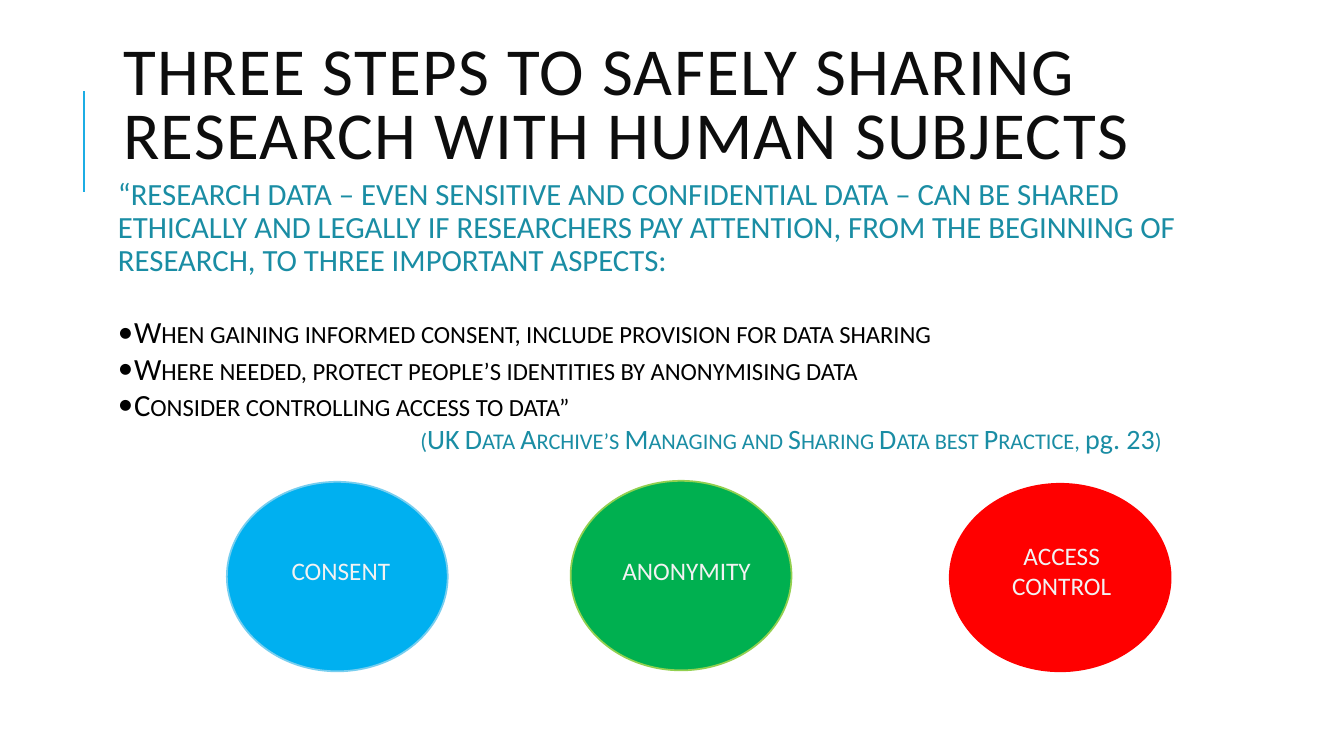
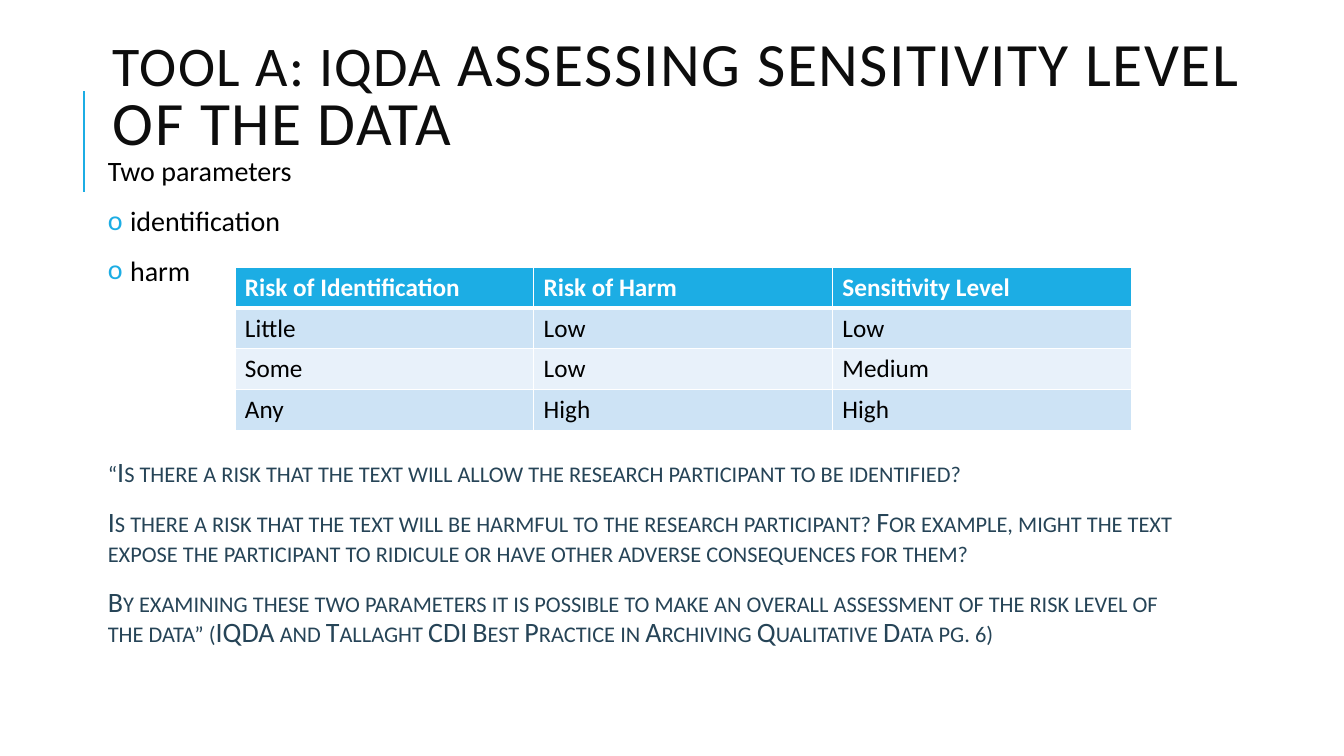
from lxml import etree
from pptx import Presentation
from pptx.dml.color import RGBColor
from pptx.enum.shapes import MSO_CONNECTOR, MSO_SHAPE
from pptx.enum.text import MSO_ANCHOR, MSO_AUTO_SIZE, PP_ALIGN
from pptx.oxml.ns import qn
from pptx.util import Inches, Pt

STRAIGHT = MSO_CONNECTOR.STRAIGHT
OVAL = MSO_SHAPE.OVAL
MIDDLE, TOP = MSO_ANCHOR.MIDDLE, MSO_ANCHOR.TOP
NO_FIT, GROW = MSO_AUTO_SIZE.NONE, MSO_AUTO_SIZE.SHAPE_TO_FIT_TEXT
LEFT, CENTER = PP_ALIGN.LEFT, PP_ALIGN.CENTER

FONT = "Calibri"
BLACK = RGBColor(0x00, 0x00, 0x00)
WHITE = RGBColor(0xFF, 0xFF, 0xFF)
INK = RGBColor(0x0D, 0x0D, 0x0D)
ACCENT = RGBColor(0x1C, 0xAD, 0xE4)
TEAL = RGBColor(0x1A, 0x8D, 0xA4)
NAVY = RGBColor(0x26, 0x44, 0x57)
LABEL = RGBColor(0xF2, 0xF2, 0xF2)
SKY = RGBColor(0x00, 0xB0, 0xF0)
SKY_EDGE = RGBColor(0x77, 0xCE, 0xEF)
GREEN = RGBColor(0x00, 0xB0, 0x50)
GREEN_EDGE = RGBColor(0x92, 0xD0, 0x50)
RED = RGBColor(0xFF, 0x00, 0x00)
BAND_DARK = RGBColor(0xCD, 0xE3, 0xF5)
BAND_LIGHT = RGBColor(0xE8, 0xF1, 0xFA)


def add_color(parent, color):
    etree.SubElement(parent, qn("a:srgbClr"), val=str(color))


def place(shape, left, top, width, height):
    shape.left, shape.top = Inches(left), Inches(top)
    shape.width, shape.height = Inches(width), Inches(height)


def style_span(span, size, color, bold=False, small_caps=False):
    span.font.name = FONT
    span.font.size = Pt(size)
    span.font.color.rgb = color
    span.font.bold = bold
    if small_caps:
        span.font._element.set("cap", "small")


def set_bullet(para, bullet, color, indent, hanging):
    """Indent the paragraph; a bullet of None switches the template's bullet off."""
    props = para._p.get_or_add_pPr()
    props.set("marL", str(Inches(indent)))
    props.set("indent", str(-Inches(hanging)))
    if bullet is None:
        etree.SubElement(props, qn("a:buNone"))
        return
    add_color(etree.SubElement(props, qn("a:buClr")), color)
    etree.SubElement(props, qn("a:buFont"), typeface=FONT)
    etree.SubElement(props, qn("a:buChar"), char=bullet)


def set_borders(cell, top, bottom):
    """Draw white cell borders; top and bottom are widths in points."""
    props = cell._tc.get_or_add_tcPr()
    for side, width in (("L", 1), ("R", 1), ("T", top), ("B", bottom)):
        line = etree.SubElement(props, qn(f"a:ln{side}"), w=str(Pt(width)))
        add_color(etree.SubElement(line, qn("a:solidFill")), WHITE)


class Slides:
    """Holds the deck, its style and the page being built."""

    def __init__(self):
        self.deck = Presentation()
        self.deck.slide_width = Inches(13.33)
        self.deck.slide_height = Inches(7.5)
        self.page = None
        self.body_frame = None

    def new_page(self):
        self.page = self.deck.slides.add_slide(self.deck.slide_layouts[1])
        x = Inches(0.83)
        rule = self.page.shapes.add_connector(STRAIGHT, x, Inches(1.9), x, Inches(0.9))
        rule.line.color.rgb = ACCENT
        rule.line.width = Pt(1.5)
        etree.SubElement(rule._element.spPr, qn("a:effectLst"))

    def title(self, area, *parts):
        """Fill the title from (text, size) parts."""
        box = self.page.shapes.title
        place(box, *area)
        frame = box.text_frame
        frame.auto_size, frame.vertical_anchor = NO_FIT, MIDDLE
        para = frame.paragraphs[0]
        para.alignment, para.line_spacing = LEFT, 0.8
        for text, size in parts:
            span = para.add_run()
            span.text = text
            style_span(span, size, INK)
            span.font._element.set("spc", "100")

    def body(self, area):
        box = self.page.placeholders[1]
        place(box, *area)
        frame = self.body_frame = box.text_frame
        frame.auto_size, frame.vertical_anchor = NO_FIT, TOP
        frame.margin_left = frame.margin_right = Inches(0.05)
        frame.margin_top = frame.margin_bottom = Inches(0.05)

    def body_para(self, parts, size, color, before=0, after=2,
                  bullet=None, bullet_color=BLACK, indent=0.0, hanging=0.0):
        """Add a paragraph made of (text, small_caps) parts."""
        para = self.body_frame.paragraphs[0]
        if para.runs:
            para = self.body_frame.add_paragraph()
        para.alignment, para.line_spacing = LEFT, 0.9
        para.space_before, para.space_after = Pt(before), Pt(after)
        set_bullet(para, bullet, bullet_color, indent, hanging)
        for text, small_caps in parts:
            span = para.add_run()
            span.text = text
            style_span(span, size, color, small_caps=small_caps)

    def ellipse(self, area, fill, edge):
        shape = self.page.shapes.add_shape(OVAL, *map(Inches, area))
        shape.shadow.inherit = False
        shape.fill.solid()
        shape.fill.fore_color.rgb = fill
        shape.line.color.rgb = edge
        shape.line.width = Pt(1.25)

    def label(self, text, area):
        frame = self.page.shapes.add_textbox(*map(Inches, area)).text_frame
        frame.word_wrap, frame.auto_size = True, GROW
        frame.text = text
        para = frame.paragraphs[0]
        para.alignment = CENTER
        style_span(para.runs[0], 18, LABEL)

    def table(self, area, rows):
        grid = self.page.shapes.add_table(
            len(rows), len(rows[0]), *map(Inches, area)).table
        for row, texts in enumerate(rows):
            header = row == 0
            fill = ACCENT if header else (BAND_LIGHT, BAND_DARK)[row % 2]
            for column, text in enumerate(texts):
                cell = grid.cell(row, column)
                cell.text = text
                style_span(cell.text_frame.paragraphs[0].runs[0], 18,
                           WHITE if header else BLACK, bold=header)
                set_borders(cell, 3 if row == 1 else 1, 3 if header else 1)
                cell.fill.solid()
                cell.fill.fore_color.rgb = fill


def three_steps(slides):
    slides.new_page()
    slides.title((1.12, 0.43, 10.63, 1.29),
                 ("THREE STEPS TO SAFELY SHARING RESEARCH WITH HUMAN SUBJECTS", 48))
    slides.body((1.12, 1.72, 11.28, 5.21))
    slides.body_para(
        [("“RESEARCH DATA – EVEN SENSITIVE AND CONFIDENTIAL DATA – CAN BE SHARED "
          "ETHICALLY AND LEGALLY IF RESEARCHERS PAY ATTENTION, FROM THE BEGINNING OF "
          "RESEARCH, TO THREE IMPORTANT ASPECTS:", False)],
        22, TEAL, after=28)
    for step in ("When gaining informed consent, include provision for data sharing",
                 "Where needed, protect people’s identities by anonymising data",
                 "Consider controlling access to data”"):
        slides.body_para([(step, True)], 22, BLACK,
                         bullet="•", indent=0.16, hanging=0.16)
    slides.body_para(
        [("(UK Data Archive’s Managing and Sharing Data best Practice, ", True),
         ("pg. 23", False), (")", True)],
        20, TEAL, indent=3.0)

    for area, fill, edge, text, label_area in (
            ((2.25, 4.78, 2.19, 1.88), SKY, SKY_EDGE,
             "CONSENT", (2.64, 5.46, 1.48, 0.4)),
            ((5.66, 4.77, 2.19, 1.88), GREEN, GREEN_EDGE,
             "ANONYMITY", (5.92, 5.46, 1.78, 0.4)),
            ((9.42, 4.8, 2.19, 1.86), RED, RED,
             "ACCESS CONTROL", (9.79, 5.31, 1.48, 0.71))):
        slides.ellipse(area, fill, edge)
        slides.label(text, label_area)


def sensitivity_level(slides):
    slides.new_page()
    slides.title((1.02, 0.25, 11.5, 1.45),
                 ("TOOL A: IQDA ", 40),
                 ("ASSESSING SENSITIVITY LEVEL OF THE DATA", 44))
    slides.body((1.02, 1.51, 10.72, 5.34))
    slides.body_para([("Two parameters", False)], 20, BLACK, before=12)
    for parameter in ("identification", "harm"):
        slides.body_para([(parameter, False)], 20, BLACK, before=12, bullet="o",
                         bullet_color=ACCENT, indent=0.22, hanging=0.22)
    # The first quotation leaves room for the table above it.
    for before, quotation in (
            (120, "“Is there a risk that the text will allow the research participant "
                  "to be identified?"),
            (12, "Is there a risk that the text will be harmful to the research "
                 "participant? For example, might the text expose the participant to "
                 "ridicule or have other adverse consequences for them?"),
            (12, "By examining these two parameters it is possible to make an overall "
                 "assessment of the risk level of the data” (IQDA and Tallaght CDI Best "
                 "Practice in Archiving Qualitative Data pg. 6)")):
        slides.body_para([(quotation, True)], 20, NAVY, before=before)
    slides.table((2.33, 2.65, 8.89, 1.62), [
        ("Risk of Identification", "Risk of Harm", "Sensitivity Level"),
        ("Little", "Low", "Low"),
        ("Some", "Low", "Medium"),
        ("Any", "High", "High"),
    ])


def main():
    slides = Slides()
    three_steps(slides)
    sensitivity_level(slides)
    slides.deck.save("out.pptx")


if __name__ == "__main__":
    main()
